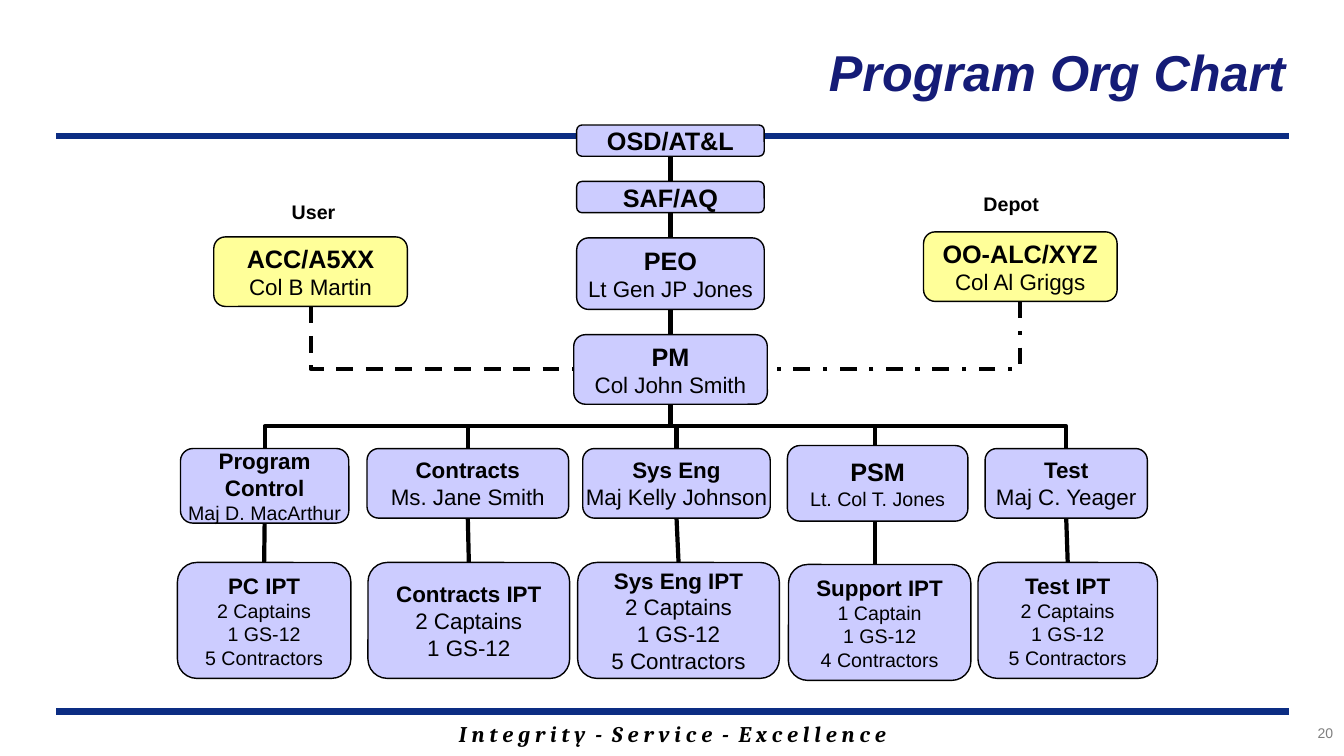
from lxml import etree
from pptx import Presentation
from pptx import util as u
from pptx.dml.color import RGBColor
from pptx.enum import dml, shapes, text
from pptx.oxml.ns import qn

COLORS = {"bar": "0C2D83", "title": "151C77", "black": "000000",
          "program": "CCCCFF", "partner": "FFFF99", "number": "7F7F7F"}
ALIGN = text.PP_ALIGN
CENTER_X = 6.65
PSM_X = 8.68
TOP, BOTTOM = 0, 2  # connection sites of a rounded rectangle

# Team: (box, name, lead, name size, lead size), (IPT box, name, staff, staff size)
TEAMS = [
    (((1.79, 4.45, 1.67, 0.74), "Program\nControl", "Maj D. MacArthur", 16, 14),
     ((1.76, 5.58, 1.72, 1.15), "PC IPT", "2 Captains\n1 GS-12\n5 Contractors", 16, 14)),
    (((3.64, 4.45, 2, 0.69), "Contracts", "Ms. Jane Smith", 16, 16),
     ((3.65, 5.58, 2, 1.15), "Contracts IPT", "2 Captains\n1 GS-12", 16, 16)),
    (((5.78, 4.45, 1.86, 0.69), "Sys Eng", "Maj Kelly Johnson", 16, 16),
     ((5.73, 5.58, 2, 1.15), "Sys Eng IPT", "2 Captains\n1 GS-12\n5 Contractors", 16, 16)),
    (((7.81, 4.42, 1.79, 0.75), "PSM", "Lt. Col T. Jones", 18, 14),
     ((7.82, 5.6, 1.81, 1.15), "Support IPT", "1 Captain\n1 GS-12\n4 Contractors", 16, 14)),
    (((9.77, 4.45, 1.61, 0.69), "Test", "Maj C. Yeager", 16, 16),
     ((9.7, 5.58, 1.78, 1.15), "Test IPT", "2 Captains\n1 GS-12\n5 Contractors", 16, 14)),
]


def rgb(name):
    return RGBColor.from_string(COLORS[name])


def inches(values):
    return [u.Inches(v) for v in values]


def style(p, size, color="black", bold=False, italic=False, font="Arial", align=ALIGN.CENTER):
    p.alignment = align
    p.font.name, p.font.size = font, u.Pt(size)
    p.font.bold, p.font.italic = bold, italic
    p.font.color.rgb = rgb(color)


def label(slide, at, words, size, **look):
    tf = slide.shapes.add_textbox(*inches(at)).text_frame
    tf.word_wrap = True
    tf.text = words
    style(tf.paragraphs[0], size, **look)


def node(slide, at, name, details="", name_size=18, detail_size=16, fill="program"):
    """Rounded box with a bold name above plain detail lines."""
    sp = slide.shapes.add_shape(shapes.MSO_SHAPE.ROUNDED_RECTANGLE, *inches(at))
    sp.shadow.inherit = False
    sp.fill.solid()
    sp.fill.fore_color.rgb = rgb(fill)
    sp.line.color.rgb = rgb("black")
    sp.line.width = u.Pt(1)
    tf = sp.text_frame
    tf.word_wrap = False
    tf.vertical_anchor = text.MSO_ANCHOR.MIDDLE
    names = name.split("\n")
    lines = names + details.split("\n") if details else names
    tf.text = "\n".join(lines)
    for i, p in enumerate(tf.paragraphs):
        is_name = i < len(names)
        style(p, name_size if is_name else detail_size, bold=is_name)
    return sp


def line(slide, start, end, color="black", width=3, kind=shapes.MSO_CONNECTOR.STRAIGHT):
    c = slide.shapes.add_connector(kind, *inches(start + end))
    c.line.color.rgb = rgb(color)
    c.line.width = u.Pt(width)
    etree.SubElement(c._element.spPr, qn("a:effectLst"))
    return c


def link(slide, upper, lower):
    c = line(slide, (0, 0), (1, 1))
    c.begin_connect(upper, BOTTOM)
    c.end_connect(lower, TOP)


def elbow(slide, start, end, dash=None):
    """Connector that leaves downwards; a dashed one has a single bend."""
    (x1, y1), (x2, y2) = start, end
    mid_x, mid_y = (x1 + x2) / 2, (y1 + y2) / 2
    half_w, half_h = (y2 - y1) / 2, abs(x2 - x1) / 2
    side = 1 if x2 < x1 else -1
    c = line(slide, (mid_x - side * half_w, mid_y - half_h),
             (mid_x + side * half_w, mid_y + half_h), kind=shapes.MSO_CONNECTOR.ELBOW)
    c._element.spPr.xfrm.set("rot", str((90 if side == 1 else 270) * 60000))
    if dash:
        c._element.spPr.find(qn("a:prstGeom")).set("prst", "bentConnector2")
        c.line.dash_style = dash


def frame(slide):
    """Title, rules, motto and page number."""
    for y in (7.06, 1.35):
        line(slide, (0.56, y), (12.78, y), "bar", 4.5)
    label(slide, (1.89, 7.1, 9.56, 0.37),
          "I n t e g r i t y  -  S e r v i c e  -  E x c e l l e n c e", 16,
          bold=True, italic=True, font="Cambria")
    label(slide, (11.65, 7.14, 1.67, 0.33), "20", 10, color="number", align=ALIGN.RIGHT)
    title = slide.shapes.title
    title.left, title.top, title.width, title.height = inches((2.43, 0.08, 10.42, 1.25))
    tf = title.text_frame
    tf.text = "Program Org Chart"
    tf.vertical_anchor = text.MSO_ANCHOR.MIDDLE
    style(tf.paragraphs[0], 36, "title", True, True, align=ALIGN.RIGHT)


def command_chain(slide):
    chain = [node(slide, (5.72, 1.24, 1.86, 0.31), "OSD/AT&L"),
             node(slide, (5.72, 1.8, 1.86, 0.31), "SAF/AQ"),
             node(slide, (5.72, 2.36, 1.86, 0.71), "PEO", "Lt Gen JP Jones"),
             node(slide, (5.69, 3.32, 1.92, 0.69), "PM", "Col John Smith")]
    for upper, lower in zip(chain, chain[1:]):
        link(slide, upper, lower)


def partner(slide, at, role, role_at, name, lead, pm_side, dash):
    left, top, width, height = at
    node(slide, at, name, lead, fill="partner")
    elbow(slide, (left + width / 2, top + height), (pm_side, 3.66), dash)
    label(slide, role_at, role, 14, bold=True)


def team(slide, lead, ipt):
    left, top, width, height = lead[0]
    x = left + width / 2
    if lead[1] == "PSM":
        line(slide, (PSM_X, 4.25), (PSM_X, top))
        line(slide, (PSM_X, top + height), (PSM_X, ipt[0][1]))
        node(slide, *lead)
        node(slide, *ipt)
    else:
        elbow(slide, (CENTER_X, 4.01), (x, top))
        link(slide, node(slide, *lead), node(slide, *ipt))


def main():
    prs = Presentation()
    prs.slide_width, prs.slide_height = inches((13.33, 7.5))
    slide = prs.slides.add_slide(prs.slide_layouts[5])
    frame(slide)
    command_chain(slide)
    partner(slide, (2.12, 2.35, 1.92, 0.69), "User", (2.66, 1.93, 0.9, 0.33),
            "ACC/A5XX", "Col B Martin", 5.69, dml.MSO_LINE.DASH)
    partner(slide, (9.16, 2.3, 1.92, 0.69), "Depot", (9.53, 1.86, 1, 0.33),
            "OO-ALC/XYZ", "Col Al Griggs", 7.61, dml.MSO_LINE.DASH_DOT)
    for lead, ipt in TEAMS:
        team(slide, lead, ipt)
    prs.save("out.pptx")


if __name__ == "__main__":
    main()
